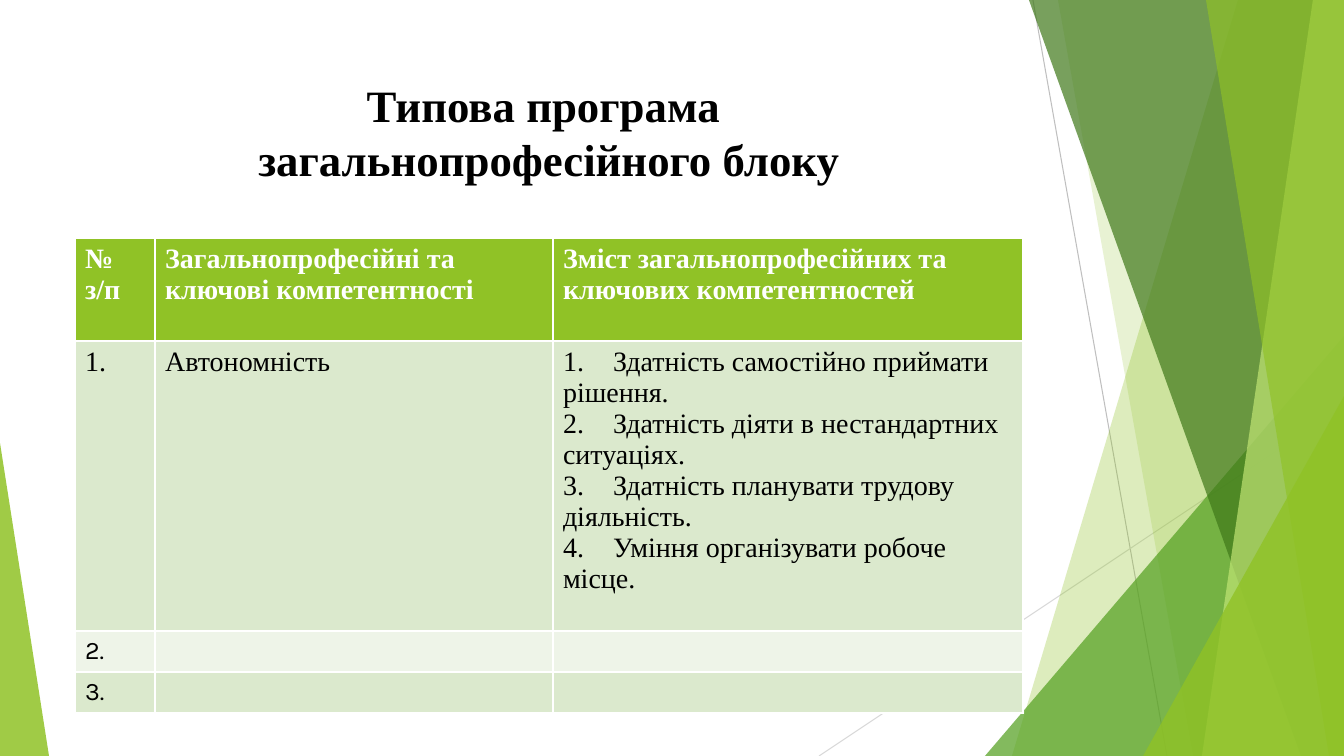
from dataclasses import dataclass

from lxml.etree import SubElement
from pptx import Presentation
from pptx.dml.color import RGBColor
from pptx.enum.shapes import MSO_CONNECTOR as Connector, MSO_SHAPE as Preset
from pptx.enum.text import MSO_ANCHOR as Anchor, MSO_AUTO_SIZE as AutoSize, PP_ALIGN as Align
from pptx.oxml.ns import qn
from pptx.util import Emu, Pt

EMU_PER_PX = 914400 / 100.8
WIDTH, HEIGHT = 1344, 756
LEAF, WHITE, BLACK = "90C226", "FFFFFF", "000000"
SERIF, SANS = "Times New Roman", "Karla"


@dataclass
class Line:
    start: tuple[int, int]
    end: tuple[int, int]
    color: str


@dataclass
class Facet:
    """A slanted left side; the rest reaches the slide's right edge."""
    top_x: int
    bottom_x: int
    color: str
    opacity: int


@dataclass
class Triangle:
    """A right triangle standing on the slide's bottom edge."""
    left: int
    top: int
    width: int
    apex: int
    color: str
    opacity: int


@dataclass
class Row:
    height: int
    cells: tuple[str, str, str]
    fill: str
    color: str = BLACK
    font: str = SERIF
    size: int = 20
    bold: bool = False


LINES = [
    Line((1033, 0), (1167, HEIGHT), "BFBFBF"),
    Line((WIDTH, 406), (819, HEIGHT), "D9D9D9"),
]
DECORATION = [
    Facet(1238, 1012, LEAF, 30),
    Facet(1058, 1193, LEAF, 20),
    Triangle(985, 336, 359, 1, "54A021", 72),
    Facet(1029, 1301, "3F7819", 70),
    Facet(1313, 1202, "C0E474", 70),
    Facet(1206, 1329, LEAF, 65),
    Triangle(1143, 396, 201, 1, LEAF, 80),
    Triangle(0, 443, 49, 0, LEAF, 85),
]
ABILITIES = "\n".join([
    "1.\tЗдатність самостійно приймати рішення.",
    "2.\tЗдатність діяти в нестандартних ситуаціях.",
    "3.\tЗдатність планувати трудову діяльність.",
    "4.\tУміння організувати робоче місце.",
])
COLUMN_WIDTHS = [80, 398, 470]
ROWS = [
    Row(103, ("№ з/п", "Загальнопрофесійні та ключові компетентності",
              "Зміст загальнопрофесійних та ключових компетентностей"),
        LEAF, color=WHITE, bold=True),
    Row(290, ("1.", "Автономність", ABILITIES), "DBE9CD"),
    Row(41, ("2.", "", ""), "EEF4E8", font=SANS, size=18),
    Row(41, ("3.", "", ""), "DBE9CD", font=SANS, size=18),
]


def px(length: int) -> Emu:
    return Emu(round(length * EMU_PER_PX))


def paint(fill, color: str) -> None:
    fill.solid()
    fill.fore_color.rgb = RGBColor.from_string(color)


def style_font(font, name: str, size: int, color: str, bold: bool) -> None:
    font.name, font.size, font.bold = name, Pt(size), bold
    paint(font.fill, color)


def finish_shape(shape, color: str, opacity: int) -> None:
    shape.shadow.inherit = False
    shape.line.fill.background()
    paint(shape.fill, color)
    color_element = shape.element.spPr.find(f"{qn('a:solidFill')}/{qn('a:srgbClr')}")
    SubElement(color_element, qn("a:alpha"), val=str(opacity * 1000))


def draw_line(shapes, line: Line) -> None:
    connector = shapes.add_connector(
        Connector.STRAIGHT, *map(px, line.start), *map(px, line.end))
    connector.line.width = Pt(0.75)
    paint(connector.line.fill, line.color)
    SubElement(connector.element.spPr, qn("a:effectLst"))


def draw_facet(shapes, facet: Facet) -> None:
    builder = shapes.build_freeform(facet.top_x, 0, scale=EMU_PER_PX)
    builder.add_line_segments([(WIDTH, 0), (WIDTH, HEIGHT), (facet.bottom_x, HEIGHT)])
    finish_shape(builder.convert_to_shape(), facet.color, facet.opacity)


def draw_triangle(shapes, triangle: Triangle) -> None:
    shape = shapes.add_shape(
        Preset.ISOSCELES_TRIANGLE, px(triangle.left), px(triangle.top),
        px(triangle.width), px(HEIGHT - triangle.top))
    shape.adjustments[0] = triangle.apex
    finish_shape(shape, triangle.color, triangle.opacity)


def fill_title(title) -> None:
    title.left, title.top, title.width, title.height = map(px, (75, 68, 948, 145))
    frame = title.text_frame
    frame.text = "Типова програма \vзагальнопрофесійного блоку"
    frame.auto_size = AutoSize.NONE
    frame.vertical_anchor = Anchor.TOP
    frame.margin_top = px(10)
    paragraph = frame.paragraphs[0]
    paragraph.alignment = Align.CENTER
    style_font(paragraph.font, SERIF, 32, BLACK, True)


def fill_cell(cell, text: str, row: Row) -> None:
    paint(cell.fill, row.fill)
    cell.text = text
    for paragraph in cell.text_frame.paragraphs:
        if "\t" in paragraph.text:
            properties = paragraph._p.get_or_add_pPr()
            tabs = SubElement(properties, qn("a:tabLst"))
            SubElement(tabs, qn("a:tab"), pos=str(px(50)), algn="l")
        style_font(paragraph.font, row.font, row.size, row.color, row.bold)


def draw_table(shapes) -> None:
    heights = [row.height for row in ROWS]
    table = shapes.add_table(
        len(ROWS), len(COLUMN_WIDTHS), px(75), px(238),
        px(sum(COLUMN_WIDTHS)), px(sum(heights))).table
    for column, width in zip(table.columns, COLUMN_WIDTHS):
        column.width = px(width)
    for table_row, row in zip(table.rows, ROWS):
        table_row.height = px(row.height)
        for cell, text in zip(table_row.cells, row.cells):
            fill_cell(cell, text, row)


def main() -> None:
    presentation = Presentation()
    presentation.slide_width, presentation.slide_height = px(WIDTH), px(HEIGHT)
    slide = presentation.slides.add_slide(presentation.slide_layouts[5])
    shapes = slide.shapes

    # Background facets
    for line in LINES:
        draw_line(shapes, line)
    for part in DECORATION:
        if isinstance(part, Facet):
            draw_facet(shapes, part)
        else:
            draw_triangle(shapes, part)

    # Title and programme table
    fill_title(shapes.title)
    draw_table(shapes)
    presentation.save("out.pptx")


if __name__ == "__main__":
    main()
